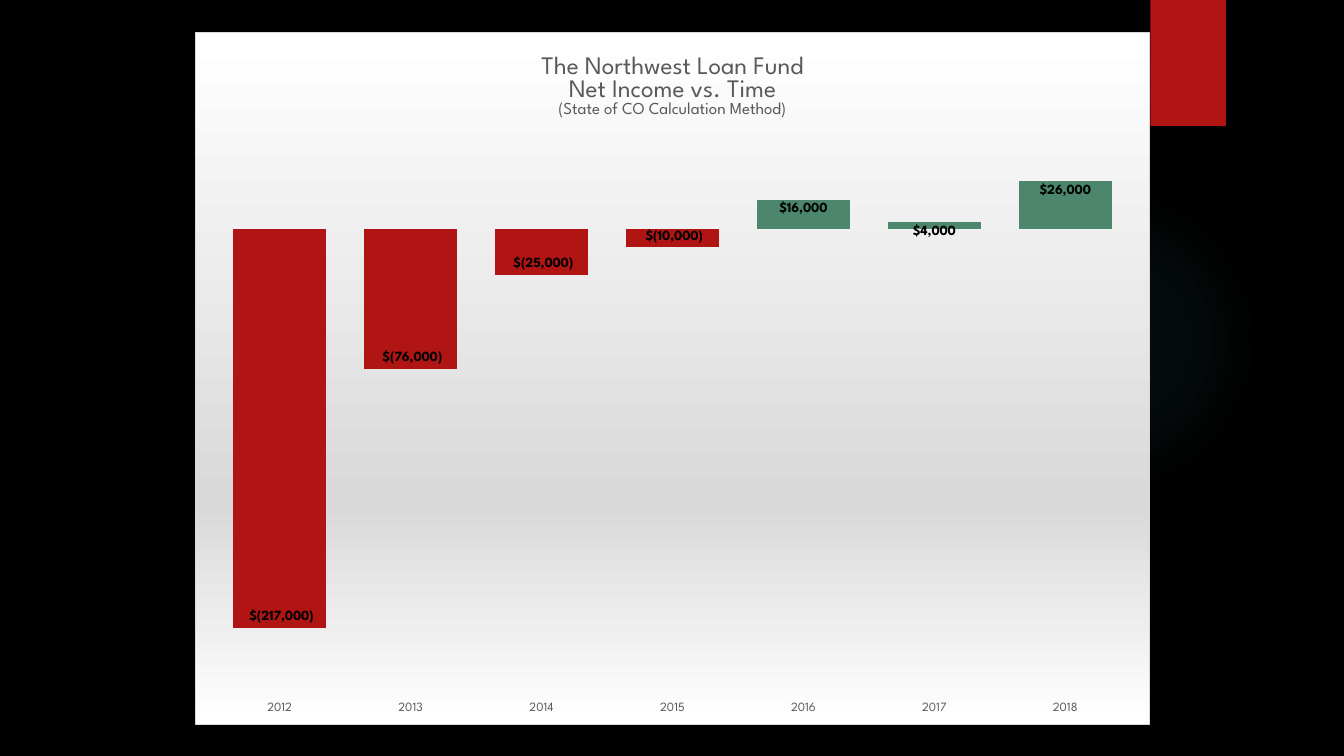
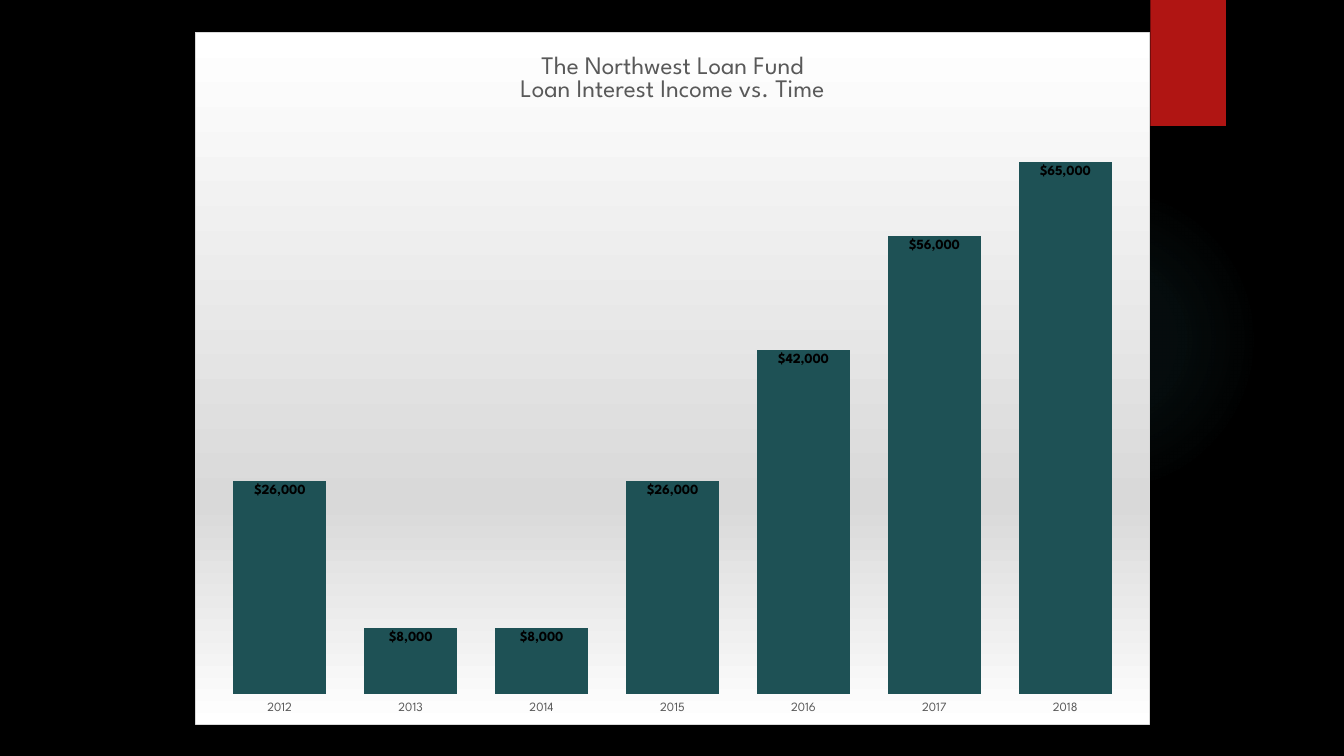
from dataclasses import dataclass

from lxml import etree
from pptx import Presentation
from pptx.chart.data import CategoryChartData
from pptx.dml.color import RGBColor
from pptx.enum import chart as charts, shapes
from pptx.oxml import parse_xml
from pptx.oxml.ns import qn
from pptx.util import Inches, Pt


@dataclass(frozen=True)
class Theme:
    font: str = "League Spartan"
    background: str = "000000"
    red: str = "B01513"
    green: str = "4B866D"
    teal: str = "1E5155"
    glow: str = "50B9C1"
    text: str = "595959"
    label: str = "000000"
    panel: str = "FFFFFF"
    panel_shade: str = "D9D9D9"
    title_size: int = 18
    subtitle_size: int = 12
    label_size: int = 10
    axis_size: int = 9


THEME = Theme()
YEARS = ["2012", "2013", "2014", "2015", "2016", "2017", "2018"]
DOLLARS = '_("$"* #,##0_);_("$"* \\(#,##0\\);_("$"* "-"??_);_(@_)'
PLOT_LEFT, PLOT_WIDTH, PLOT_BOTTOM = 0.02, 0.96, 0.956  # shares of the chart

SLIDES = [
    {
        "title": [
            ("The Northwest Loan Fund", THEME.title_size),
            ("Net Income vs. Time", THEME.title_size),
            ("(State of CO Calculation Method)", THEME.subtitle_size),
        ],
        "values": [-217000, -76000, -25000, -10000, 16000, 4000, 26000],
        "gain": THEME.green,
        "loss": THEME.red,
        "scale": (-253000, 50000),
        "plot_top": 0.151,
    },
    {
        "title": [
            ("The Northwest Loan Fund", THEME.title_size),
            ("Loan Interest Income vs. Time", THEME.title_size),
        ],
        "values": [26000, 8000, 8000, 26000, 42000, 56000, 65000],
        "gain": THEME.teal,
        "loss": THEME.red,
        "scale": (0, 70000),
        "plot_top": 0.128,
    },
]

DRAWING_NS = 'xmlns:a="http://schemas.openxmlformats.org/drawingml/2006/main"'
CHART_NS = 'xmlns:c="http://schemas.openxmlformats.org/drawingml/2006/chart"'


def rgb(value):
    return RGBColor.from_string(value)


def gradient(stops, direction):
    """Gradient fill XML from (position %, colour, opacity %) stops."""
    marks = "".join(
        f'<a:gs pos="{position * 1000}"><a:srgbClr val="{color}">'
        f'<a:alpha val="{opacity * 1000}"/></a:srgbClr></a:gs>'
        for position, color, opacity in stops
    )
    return (f'<a:gradFill {DRAWING_NS} rotWithShape="1">'
            f"<a:gsLst>{marks}</a:gsLst>{direction}</a:gradFill>")


def style(font, size, color, bold=False):
    font.name = THEME.font
    font.size = Pt(size)
    font.bold = bold
    font.color.rgb = rgb(color)


def add_plain_shape(slide, preset, left, top, width, height, color):
    shape = slide.shapes.add_shape(
        preset, Inches(left), Inches(top), Inches(width), Inches(height))
    shape.shadow.inherit = False
    shape.line.fill.background()
    shape.fill.solid()
    shape.fill.fore_color.rgb = rgb(color)
    return shape


def add_backdrop(slide):
    slide.background.fill.solid()
    slide.background.fill.fore_color.rgb = rgb(THEME.background)
    glow = add_plain_shape(
        slide, shapes.MSO_SHAPE.OVAL, 9.41, 1.83, 3.08, 3.08, THEME.glow)
    solid = glow.element.spPr.find(qn("a:solidFill"))
    center = ('<a:path path="circle">'
              '<a:fillToRect l="50000" t="50000" r="50000" b="50000"/></a:path>')
    fade = [(0, THEME.glow, 7), (36, THEME.glow, 6), (69, THEME.glow, 0)]
    solid.getparent().replace(solid, parse_xml(gradient(fade, center)))
    add_plain_shape(
        slide, shapes.MSO_SHAPE.RECTANGLE, 11.41, 0, 0.75, 1.25, THEME.red)


def paint_panel(chart):
    """Give the whole chart area its gradient and thin border."""
    shades = [(0, THEME.panel, 100), (68, THEME.panel_shade, 100),
              (100, THEME.panel, 100)]
    fill = gradient(shades, '<a:lin ang="5400000" scaled="0"/>')
    panel = parse_xml(
        f"<c:spPr {CHART_NS} {DRAWING_NS}>{fill}"
        f'<a:ln w="{Pt(0.75)}"><a:solidFill><a:srgbClr val="{THEME.panel_shade}"/>'
        "</a:solidFill></a:ln></c:spPr>")
    chart.element.find(qn("c:chart")).addnext(panel)


def place_plot(chart, top):
    """Fix the inner plot area, in shares of the chart."""
    plot_area = chart.element.find(qn("c:chart")).find(qn("c:plotArea"))
    for layout in plot_area.findall(qn("c:layout")):
        plot_area.remove(layout)
    layout = etree.Element(qn("c:layout"))
    manual = etree.SubElement(layout, qn("c:manualLayout"))
    settings = [
        ("layoutTarget", "inner"), ("xMode", "edge"), ("yMode", "edge"),
        ("x", PLOT_LEFT), ("y", top),
        ("w", PLOT_WIDTH), ("h", round(PLOT_BOTTOM - top, 3)),
    ]
    for tag, value in settings:
        etree.SubElement(manual, qn(f"c:{tag}")).set("val", str(value))
    plot_area.insert(0, layout)


def add_title(chart, lines):
    frame = chart.chart_title.text_frame
    for index, (line, size) in enumerate(lines):
        paragraph = frame.add_paragraph() if index else frame.paragraphs[0]
        run = paragraph.add_run()
        run.text = line
        style(run.font, size, THEME.text)
    chart.chart_title.include_in_layout = False


def style_axes(chart, scale):
    years = chart.category_axis
    years.tick_label_position = charts.XL_TICK_LABEL_POSITION.LOW
    years.major_tick_mark = charts.XL_TICK_MARK.NONE
    years.minor_tick_mark = charts.XL_TICK_MARK.NONE
    years.has_major_gridlines = False
    years.format.line.fill.background()
    style(years.tick_labels.font, THEME.axis_size, THEME.text)
    income = chart.value_axis
    income.minimum_scale, income.maximum_scale = scale
    income.has_major_gridlines = False
    income.visible = False


def style_columns(chart, content):
    plot = chart.plots[0]
    plot.gap_width = 41
    plot.vary_by_categories = False
    series = plot.series[0]
    series.invert_if_negative = False
    series.format.fill.solid()
    series.format.fill.fore_color.rgb = rgb(content["gain"])
    for index, value in enumerate(content["values"]):
        if value < 0:
            fill = series.points[index].format.fill
            fill.solid()
            fill.fore_color.rgb = rgb(content["loss"])
    labels = series.data_labels
    labels.show_value = True
    labels.position = charts.XL_LABEL_POSITION.INSIDE_END
    labels.number_format = DOLLARS
    labels.number_format_is_linked = False
    style(labels.font, THEME.label_size, THEME.label, bold=True)


def add_income_chart(slide, content):
    data = CategoryChartData(number_format=DOLLARS)
    data.categories = YEARS
    data.add_series("Series 1", content["values"])
    chart = slide.shapes.add_chart(
        charts.XL_CHART_TYPE.COLUMN_CLUSTERED,
        Inches(1.93), Inches(0.32), Inches(9.48), Inches(6.87), data).chart
    chart.has_legend = False
    style(chart.font, THEME.label_size, THEME.text)
    add_title(chart, content["title"])
    style_axes(chart, content["scale"])
    style_columns(chart, content)
    place_plot(chart, content["plot_top"])
    paint_panel(chart)


def main():
    deck = Presentation()
    deck.slide_width, deck.slide_height = Inches(13.33), Inches(7.5)
    for content in SLIDES:
        slide = deck.slides.add_slide(deck.slide_layouts[6])
        add_backdrop(slide)
        add_income_chart(slide, content)
    deck.save("out.pptx")


if __name__ == "__main__":
    main()
